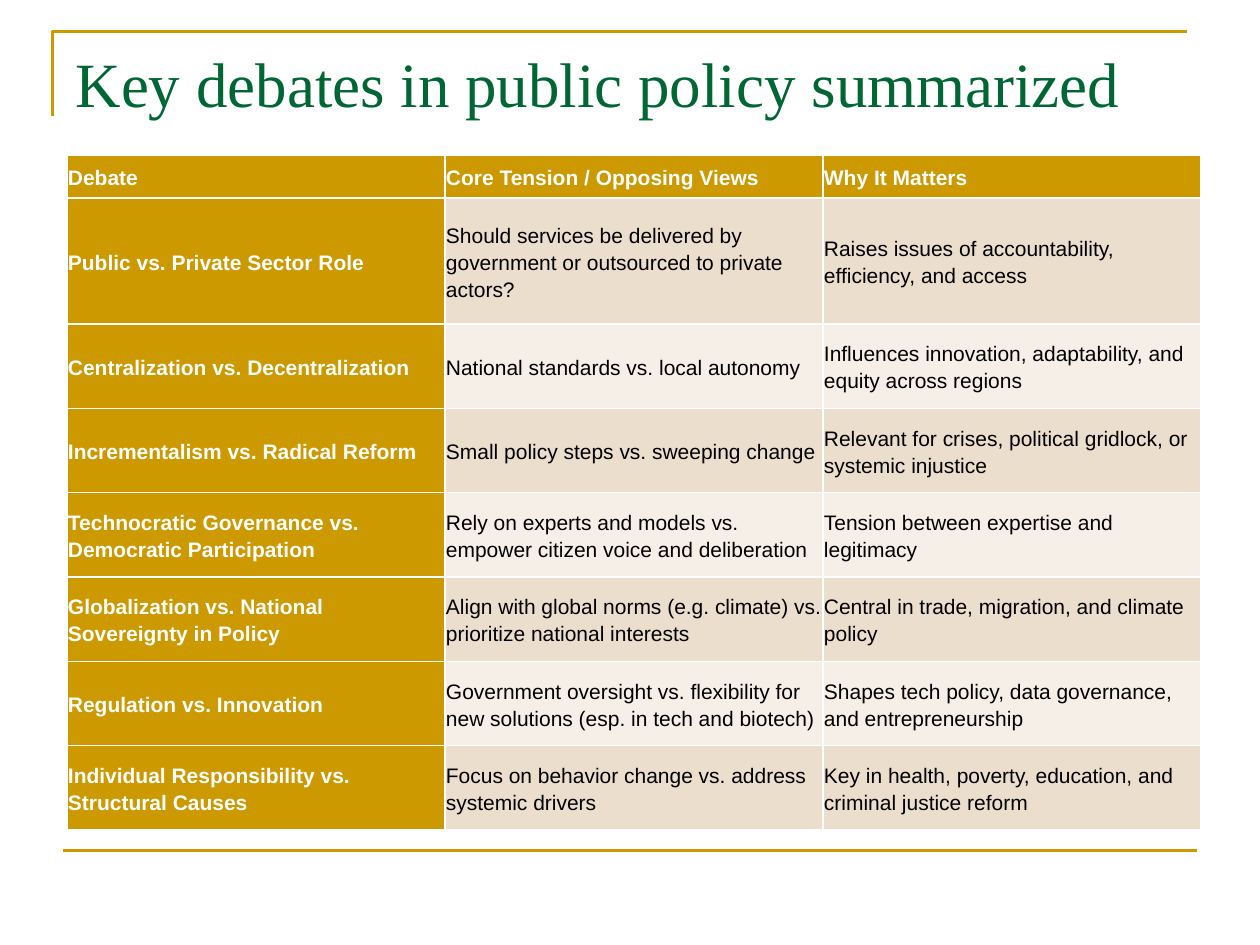
from pptx import Presentation
from pptx.dml.color import RGBColor
from pptx.enum import shapes, text
from pptx.oxml.ns import qn
from pptx.util import Cm, Pt
from lxml import etree

# Content
TITLE = "Key debates in public policy summarized"
HEADER = ("Debate", "Core Tension / Opposing Views", "Why It Matters")
DEBATES = [
    ("Public vs. Private Sector Role",
     "Should services be delivered by government or outsourced to private actors?",
     "Raises issues of accountability, efficiency, and access"),
    ("Centralization vs. Decentralization",
     "National standards vs. local autonomy",
     "Influences innovation, adaptability, and equity across regions"),
    ("Incrementalism vs. Radical Reform",
     "Small policy steps vs. sweeping change",
     "Relevant for crises, political gridlock, or systemic injustice"),
    ("Technocratic Governance vs. Democratic Participation",
     "Rely on experts and models vs. empower citizen voice and deliberation",
     "Tension between expertise and legitimacy"),
    ("Globalization vs. National Sovereignty in Policy",
     "Align with global norms (e.g. climate) vs. prioritize national interests",
     "Central in trade, migration, and climate policy"),
    ("Regulation vs. Innovation",
     "Government oversight vs. flexibility for new solutions (esp. in tech and biotech)",
     "Shapes tech policy, data governance, and entrepreneurship"),
    ("Individual Responsibility vs. Structural Causes",
     "Focus on behavior change vs. address systemic drivers",
     "Key in health, poverty, education, and criminal justice reform"),
]

THEME = {
    "gold": RGBColor(0xCC, 0x99, 0x00),
    "green": RGBColor(0x00, 0x66, 0x33),
    "white": RGBColor(0xFF, 0xFF, 0xFF),
    "black": RGBColor(0x00, 0x00, 0x00),
    "bands": (RGBColor(0xEC, 0xDE, 0xCC), RGBColor(0xF6, 0xEF, 0xE7)),
    "title_font": "Times New Roman", "title_size": Pt(36),
    "body_font": "Arial", "body_size": Pt(12),
    "rule": Pt(1.5),
}
WIDTH = Cm(22.86)
ROW_HEIGHTS = [Cm(0.87), Cm(2.54)] + [Cm(1.7)] * (len(DEBATES) - 1)


def style_line(line):
    line.color.rgb = THEME["gold"]
    line.width = THEME["rule"]


def add_rules(page):
    # Corner rule around the title
    left, top = Cm(1.06), Cm(0.64)
    builder = page.shapes.build_freeform(left, top + Cm(1.7))
    builder.add_line_segments([(left, top), (left + WIDTH, top)], close=False)
    corner = builder.convert_to_shape()
    corner.shadow.inherit = False
    corner.fill.background()
    style_line(corner.line)

    # Rule under the table
    left, top = Cm(1.27), Cm(17.15)
    rule = page.shapes.add_connector(
        shapes.MSO_CONNECTOR.STRAIGHT, left, top, left + WIDTH, top)
    style_line(rule.line)
    etree.SubElement(rule.element.spPr, qn("a:effectLst"))


def add_title(page):
    title = page.shapes.title
    title.left, title.top, title.width, title.height = Cm(1.27), Cm(0.76), WIDTH, Cm(3.18)
    frame = title.text_frame
    frame.text = TITLE
    frame.vertical_anchor = text.MSO_ANCHOR.TOP
    para = frame.paragraphs[0]
    para.alignment = text.PP_ALIGN.LEFT
    para.font.name = THEME["title_font"]
    para.font.size = THEME["title_size"]
    para.font.color.rgb = THEME["green"]


def fill_cell(cell, words, row, column):
    heading = row == 0 or column == 0
    cell.fill.solid()
    cell.fill.fore_color.rgb = THEME["gold"] if heading else THEME["bands"][(row - 1) % 2]
    cell.vertical_anchor = text.MSO_ANCHOR.MIDDLE
    cell.margin_left = cell.margin_right = cell.margin_top = cell.margin_bottom = Cm(0.02)
    cell.text = words
    para = cell.text_frame.paragraphs[0]
    para.line_spacing = 1.15
    para.font.name = THEME["body_font"]
    para.font.size = THEME["body_size"]
    para.font.bold = heading
    para.font.color.rgb = THEME["white"] if heading else THEME["black"]


def add_debates(page):
    rows = [HEADER] + DEBATES
    table = page.shapes.add_table(
        len(rows), len(HEADER), Cm(1.35), Cm(3.12), WIDTH, sum(ROW_HEIGHTS)).table
    table.first_col = True
    for row, (height, entries) in enumerate(zip(ROW_HEIGHTS, rows)):
        table.rows[row].height = height
        for column, words in enumerate(entries):
            fill_cell(table.cell(row, column), words, row, column)


def main():
    deck = Presentation()
    deck.slide_width, deck.slide_height = Cm(25.4), Cm(19.05)
    page = deck.slides.add_slide(deck.slide_layouts[5])
    add_rules(page)
    add_title(page)
    add_debates(page)
    deck.save("out.pptx")


if __name__ == "__main__":
    main()
